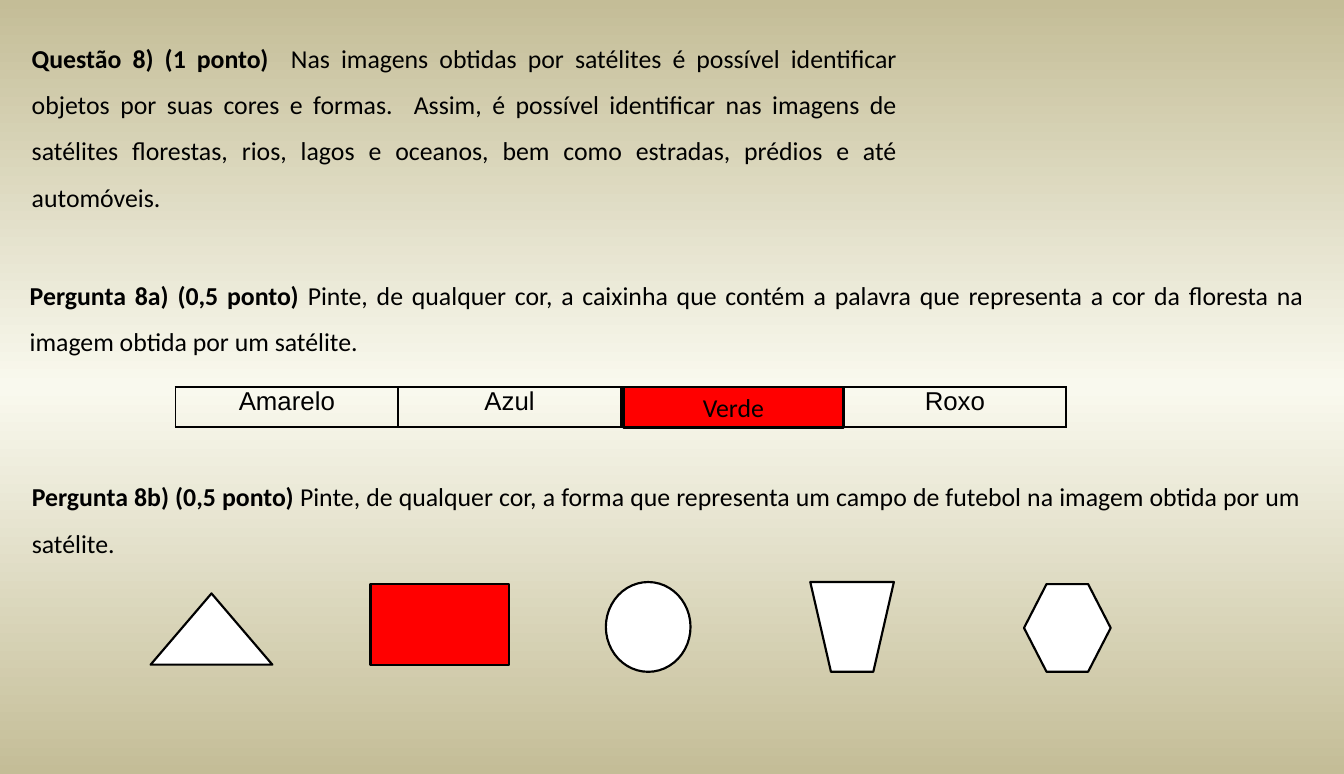
from copy import deepcopy

from lxml.etree import SubElement
from pptx import Presentation
from pptx.dml.color import RGBColor
from pptx.enum.shapes import MSO_SHAPE as Preset
from pptx.enum.text import MSO_ANCHOR as Anchor, MSO_AUTO_SIZE as AutoSize, PP_ALIGN as Align
from pptx.oxml.ns import qn
from pptx.util import Inches, Pt

BLACK = RGBColor(0x00, 0x00, 0x00)
WHITE = RGBColor(0xFF, 0xFF, 0xFF)
RED = RGBColor(0xFF, 0x00, 0x00)
KHAKI = RGBColor(0xC4, 0xBD, 0x97)
IVORY = RGBColor(0xF9, 0xF9, 0xEE)

presentation = Presentation()
presentation.slide_width = Inches(13.02)
presentation.slide_height = Inches(7.5)
slide = presentation.slides.add_slide(presentation.slide_layouts[6])
shapes = slide.shapes


def place(*shares):
    """Turn x, y, x, y... percentages of the slide into lengths."""
    sides = (presentation.slide_width, presentation.slide_height)
    return [int(sides[i % 2] * share / 100) for i, share in enumerate(shares)]


def paint(shape, color, width=1.5):
    shape.shadow.inherit = False
    shape.fill.solid()
    shape.fill.fore_color.rgb = color
    shape.line.color.rgb = BLACK
    shape.line.width = Pt(width)


# Background: khaki edges, ivory middle
background = slide.background.fill
background.gradient()
background.gradient_angle = 90
stop_list = slide.element.find(".//" + qn("a:gsLst"))
stop_list.insert(1, deepcopy(stop_list[0]))
for stop, position, color in zip(background.gradient_stops, (0, 0.5, 1), (KHAKI, IVORY, KHAKI)):
    stop.position = position
    stop.color.rgb = color

# Question texts
questions = [
    ((1.61, 2.8, 65.9, 24.93), "Questão 8) (1 ponto)  ",
     "Nas imagens obtidas por satélites é possível identificar objetos por suas cores e formas.  "
     "Assim, é possível identificar nas imagens de satélites florestas, rios, lagos e oceanos, "
     "bem como estradas, prédios e até automóveis."),
    ((1.46, 33.47, 96.31, 13.47), "Pergunta 8a) (0,5 ponto) ",
     "Pinte, de qualquer cor, a caixinha que contém a palavra que representa a cor da floresta "
     "na imagem obtida por um satélite."),
    ((1.61, 59.47, 95.93, 13.47), "Pergunta 8b) (0,5 ponto)",
     " Pinte, de qualquer cor, a forma que representa um campo de futebol na imagem obtida "
     "por um satélite."),
]
for box, heading, body in questions:
    frame = shapes.add_textbox(*place(*box)).text_frame
    frame.word_wrap = True
    frame.auto_size = AutoSize.SHAPE_TO_FIT_TEXT
    paragraph = frame.paragraphs[0]
    paragraph.alignment = Align.JUSTIFY
    paragraph.line_spacing = 1.5
    for text, bold in ((heading, True), (body, False)):
        run = paragraph.add_run()
        run.text = text
        run.font.name = "Calibri"
        run.font.size = Pt(18)
        run.font.bold = bold
        run.font.color.rgb = BLACK

# Colour table
color_names = ["Amarelo", "Azul", "Verde", "Roxo"]
table = shapes.add_table(1, len(color_names), *place(13.06, 50, 66.28, 5.2)).table
table.first_row = table.horz_banding = False
for cell, name in zip(table.rows[0].cells, color_names):
    cell.margin_left = cell.margin_right = Inches(0.07)
    cell.margin_top = cell.margin_bottom = 0
    properties = cell._tc.get_or_add_tcPr()
    for side in ("a:lnL", "a:lnR", "a:lnT", "a:lnB"):
        border = SubElement(properties, qn(side), w=str(Pt(1.5)))
        SubElement(SubElement(border, qn("a:solidFill")), qn("a:srgbClr"), val=str(BLACK))
    if name == "Verde":
        cell.fill.solid()
        cell.fill.fore_color.rgb = WHITE
    else:
        cell.fill.background()
    paragraph = cell.text_frame.paragraphs[0]
    paragraph.alignment = Align.CENTER
    run = paragraph.add_run()
    run.text = name
    run.font.name = "Arial"
    run.font.size = Pt(18)
    run.font.color.rgb = BLACK

# Answer to 8a: the painted box
answer = shapes.add_shape(Preset.RECTANGLE, *place(46.39, 50, 16.36, 5.2))
paint(answer, RED, 2)
answer.text_frame.vertical_anchor = Anchor.MIDDLE
paragraph = answer.text_frame.paragraphs[0]
paragraph.alignment = Align.CENTER
run = paragraph.add_run()
run.text = "Verde"
run.font.name = "Calibri"
run.font.size = Pt(18)
run.font.color.rgb = BLACK

# Forms of 8b, with the football field painted
forms = [
    (Preset.ISOSCELES_TRIANGLE, (11.21, 76.67, 9.06, 9.2), WHITE),
    (Preset.FLOWCHART_CONNECTOR, (45.08, 75.2, 6.3, 11.6), WHITE),
    (Preset.HEXAGON, (76.19, 75.47, 6.45, 11.33), WHITE),
    (Preset.RECTANGLE, (27.57, 75.47, 10.29, 10.4), RED),
]
for preset, box, color in forms:
    form = shapes.add_shape(preset, *place(*box))
    paint(form, color)
    if preset == Preset.HEXAGON:
        form.adjustments[0] = 0.26

# Trapezoid standing on its short side
corners = [place(*corner) for corner in
           ((60.29, 75.2), (61.83, 86.8), (64.98, 86.8), (66.51, 75.2))]
builder = shapes.build_freeform(*corners[0])
builder.add_line_segments(corners[1:], close=True)
paint(builder.convert_to_shape(), WHITE)

presentation.save("out.pptx")
